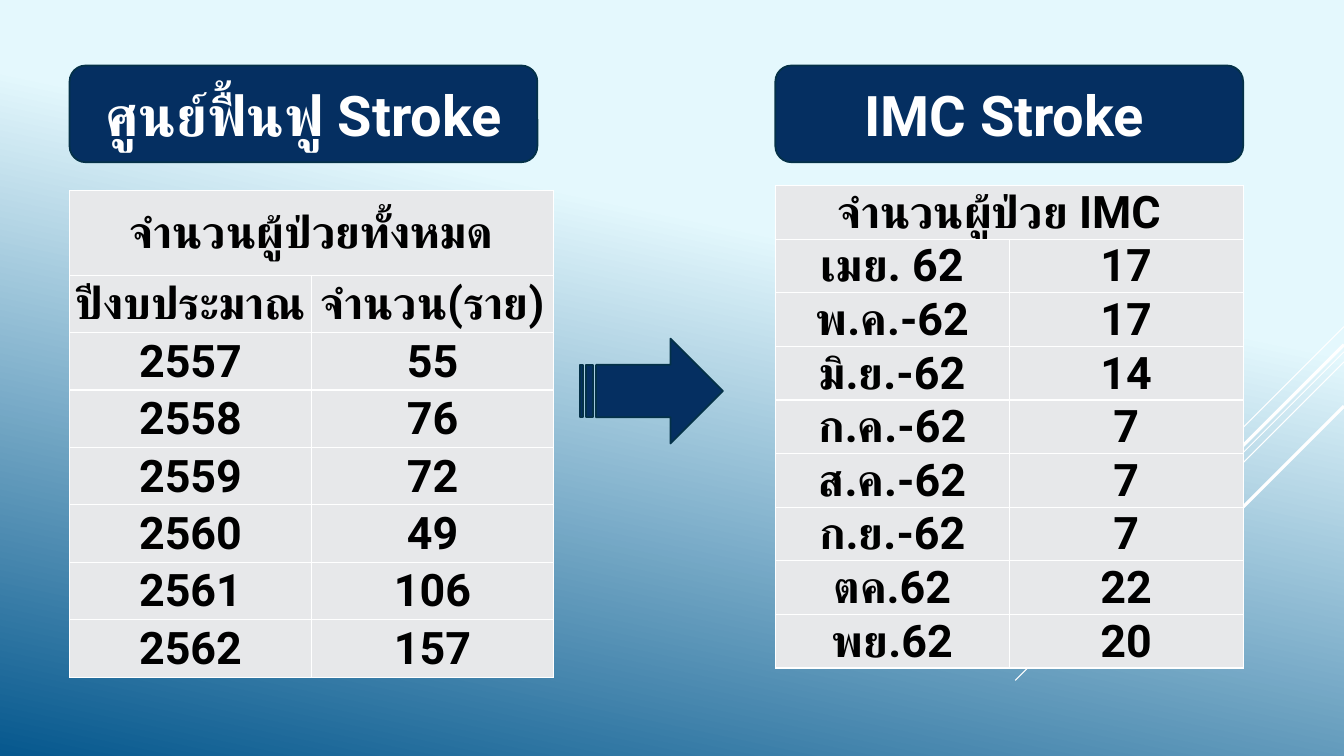
from lxml.etree import SubElement
from pptx import Presentation
from pptx.dml.color import RGBColor
from pptx.enum.shapes import MSO_CONNECTOR, MSO_SHAPE
from pptx.enum.text import MSO_ANCHOR, PP_ALIGN
from pptx.oxml.ns import qn
from pptx.util import Inches, Pt

THEME = {
    "font": "Roboto",
    "sky": "E4F8FD", "sea": "06588E", "white": "FFFFFF", "black": "000000",
    "navy": "052F61", "outline": "043148", "cell": "E7E8EA",
    "banner_size": 40, "table_size": 32, "outline_width": 1.25, "border_width": 1,
}

# nudge: extra right margin that shifts a heading slightly to the left
PANELS = [
    {
        "banner": "ศูนย์ฟื้นฟู Stroke", "heading": "จำนวนผู้ป่วยทั้งหมด", "nudge": 0,
        "rows": [
            ("ปีงบประมาณ", "จำนวน(ราย)"),
            ("2557", "55"), ("2558", "76"), ("2559", "72"),
            ("2560", "49"), ("2561", "106"), ("2562", "157"),
        ],
        "left": 0.69, "top": 1.89, "column": 2.4, "heading_height": 0.84, "row_height": 0.57,
    },
    {
        "banner": "IMC Stroke", "heading": "จำนวนผู้ป่วย IMC", "nudge": 0.2,
        "rows": [
            ("เมย. 62", "17"), ("พ.ค.-62", "17"), ("มิ.ย.-62", "14"), ("ก.ค.-62", "7"),
            ("ส.ค.-62", "7"), ("ก.ย.-62", "7"), ("ตค.62", "22"), ("พย.62", "20"),
        ],
        "left": 7.69, "top": 1.84, "column": 2.32, "heading_height": 0.51, "row_height": 0.51,
    },
]
BANNER_TOP, BANNER_WIDTH, BANNER_HEIGHT = 0.65, 4.64, 0.96
ARROW_BOX = (5.75, 3.36, 1.42, 1.04)

# Diagonal streaks from the right edge: start height, run at 45 degrees, width in points
SLIDE_WIDTH, SLIDE_HEIGHT = 13.33, 7.5
STREAKS = [(3.24, 1, 0.75), (3.49, 3.26, 0.75), (3.59, 2.07, 0.75),
           (3.42, 1.91, 2.25), (4.03, 1.39, 2.25)]


def color(name):
    return RGBColor.from_string(THEME[name])


def write(frame, text, size, ink):
    paragraph = frame.paragraphs[0]
    paragraph.alignment = PP_ALIGN.CENTER
    run = paragraph.add_run()
    run.text = text
    for attribute, value in {"name": THEME["font"], "size": Pt(THEME[size]), "bold": True}.items():
        setattr(run.font, attribute, value)
    run.font.color.rgb = color(ink)
    # Thai letters take the complex-script font
    SubElement(run.font._element, qn("a:cs"), typeface=THEME["font"])


def paint_background(slide):
    fill = slide.background.fill
    fill.gradient()
    fill.gradient_angle = 258
    for stop, (name, position) in zip(fill.gradient_stops, [("sky", 0.34), ("sea", 1)]):
        stop.color.rgb = color(name)
        stop.position = position


def add_streak(slide, top, run, width):
    streak = slide.shapes.add_connector(
        MSO_CONNECTOR.STRAIGHT, Inches(SLIDE_WIDTH), Inches(top),
        Inches(SLIDE_WIDTH - run), Inches(top + run))
    streak.line.color.rgb = color("white")
    streak.line.width = Pt(width)
    SubElement(streak._element.spPr, qn("a:effectLst"))


def add_navy_shape(slide, preset, box):
    shape = slide.shapes.add_shape(preset, *map(Inches, box))
    shape.shadow.inherit = False
    shape.fill.solid()
    shape.fill.fore_color.rgb = color("navy")
    shape.line.color.rgb = color("outline")
    shape.line.width = Pt(THEME["outline_width"])
    return shape


def add_banner(slide, panel):
    box = (panel["left"], BANNER_TOP, BANNER_WIDTH, BANNER_HEIGHT)
    frame = add_navy_shape(slide, MSO_SHAPE.ROUNDED_RECTANGLE, box).text_frame
    frame.word_wrap = True
    frame.vertical_anchor = MSO_ANCHOR.MIDDLE
    frame.margin_right = Inches(0.1 + panel["nudge"] / 2)
    write(frame, panel["banner"], "banner_size", "white")


def style_cell(cell):
    margins = {"margin_left": 0.01, "margin_right": 0.01, "margin_top": 0.01, "margin_bottom": 0}
    for attribute, value in margins.items():
        setattr(cell, attribute, Inches(value))
    cell.vertical_anchor = MSO_ANCHOR.MIDDLE
    properties = cell._tc.get_or_add_tcPr()
    for side in ("lnL", "lnR", "lnT", "lnB"):
        border = SubElement(properties, qn(f"a:{side}"), w=str(Pt(THEME["border_width"])))
        SubElement(SubElement(border, qn("a:solidFill")), qn("a:srgbClr"), val=THEME["white"])
    cell.fill.solid()
    cell.fill.fore_color.rgb = color("cell")


def add_patient_table(slide, panel):
    rows = [(panel["heading"], "")] + panel["rows"]
    heights = [panel["heading_height"]] + [panel["row_height"]] * len(panel["rows"])
    box = (panel["left"], panel["top"], 2 * panel["column"], sum(heights))
    table = slide.shapes.add_table(len(rows), 2, *map(Inches, box)).table
    for column in table.columns:
        column.width = Inches(panel["column"])
    for r, (texts, height) in enumerate(zip(rows, heights)):
        table.rows[r].height = Inches(height)
        for c, text in enumerate(texts):
            cell = table.cell(r, c)
            style_cell(cell)
            if text:
                write(cell.text_frame, text, "table_size", "black")
    heading = table.cell(0, 0)
    heading.merge(table.cell(0, 1))
    heading.margin_right = Inches(0.01 + panel["nudge"])


def main():
    presentation = Presentation()
    presentation.slide_width = Inches(SLIDE_WIDTH)
    presentation.slide_height = Inches(SLIDE_HEIGHT)
    slide = presentation.slides.add_slide(presentation.slide_layouts[6])
    paint_background(slide)
    for streak in STREAKS:
        add_streak(slide, *streak)
    for panel in PANELS:
        add_banner(slide, panel)
        add_patient_table(slide, panel)
    add_navy_shape(slide, MSO_SHAPE.STRIPED_RIGHT_ARROW, ARROW_BOX)
    presentation.save("out.pptx")


if __name__ == "__main__":
    main()
